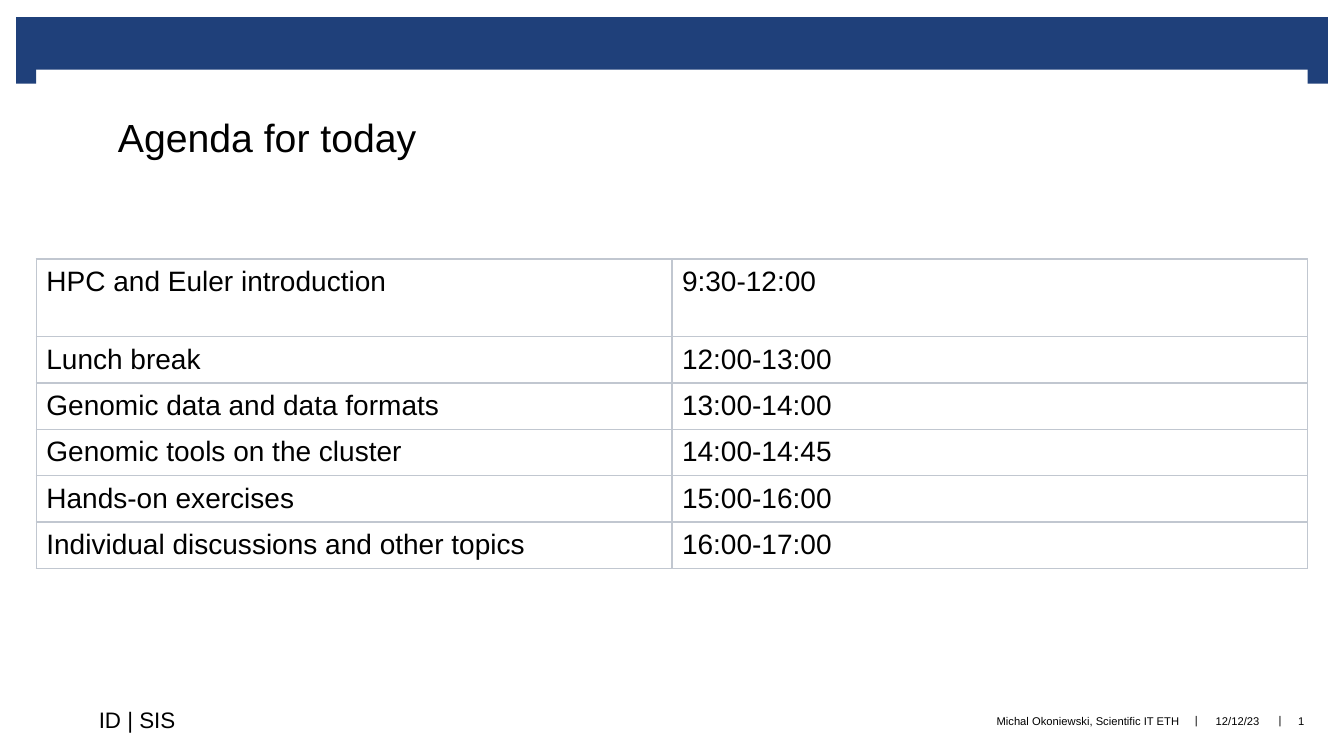
import pptx
import pptx.dml.color
import pptx.enum.shapes
import pptx.enum.text
import pptx.oxml
import pptx.oxml.ns
import pptx.util
from pptx.util import Inches

COLORS = {"band": "1F407A", "text": "000000", "border": "C1C7D0", "cell": "FFFFFF"}
ALIGN = pptx.enum.text.PP_ALIGN
ANCHOR = pptx.enum.text.MSO_ANCHOR

AGENDA = [
    ("HPC and Euler introduction", "9:30-12:00"),
    ("Lunch break", "12:00-13:00"),
    ("Genomic data and data formats", "13:00-14:00"),
    ("Genomic tools on the cluster", "14:00-14:45"),
    ("Hands-on exercises", "15:00-16:00"),
    ("Individual discussions and other topics", "16:00-17:00"),
]


def rgb(name):
    return pptx.dml.color.RGBColor.from_string(COLORS[name])


class AgendaSlide:
    font_name = "Arial"

    def __init__(self, presentation):
        title_only = presentation.slide_layouts[5]
        self.slide = presentation.slides.add_slide(title_only)

    def set_text(self, text_frame, text, size, align=ALIGN.LEFT):
        text_frame.text = text
        paragraph = text_frame.paragraphs[0]
        paragraph.alignment = align
        paragraph.font.name = self.font_name
        paragraph.font.size = pptx.util.Pt(size)
        paragraph.font.color.rgb = rgb("text")

    def band(self, left, top, width, height):
        shape = self.slide.shapes.add_shape(
            pptx.enum.shapes.MSO_SHAPE.RECTANGLE,
            Inches(left), Inches(top), Inches(width), Inches(height))
        shape.shadow.inherit = False
        shape.fill.solid()
        shape.fill.fore_color.rgb = rgb("band")
        shape.line.fill.background()

    def title(self, text, left, top, width, height):
        title = self.slide.shapes.title
        title.left, title.top = Inches(left), Inches(top)
        title.width, title.height = Inches(width), Inches(height)
        frame = title.text_frame
        frame.word_wrap = False
        frame.auto_size = pptx.enum.text.MSO_AUTO_SIZE.NONE
        frame.vertical_anchor = ANCHOR.MIDDLE
        self.set_text(frame, text, 28)

    def label(self, text, left, top, width, height, size=8, align=ALIGN.CENTER):
        box = self.slide.shapes.add_textbox(
            Inches(left), Inches(top), Inches(width), Inches(height))
        frame = box.text_frame
        frame.margin_left = frame.margin_right = 0
        frame.margin_top = frame.margin_bottom = 0
        frame.vertical_anchor = ANCHOR.MIDDLE
        frame.word_wrap = True
        self.set_text(frame, text, size, align)

    def table(self, rows, left, top, width, row_heights):
        column_count = len(rows[0])
        table = self.slide.shapes.add_table(
            len(rows), column_count, Inches(left), Inches(top),
            Inches(width), Inches(sum(row_heights))).table
        table.first_row = table.horz_banding = False
        for column in table.columns:
            column.width = Inches(width / column_count)
        for row, height, texts in zip(table.rows, row_heights, rows):
            row.height = Inches(height)
            for cell, text in zip(row.cells, texts):
                cell.margin_left = cell.margin_right = Inches(0.1)
                cell.margin_top = cell.margin_bottom = Inches(0.07)
                self.set_text(cell.text_frame, text, 20)
                self.cell_borders(cell)
                cell.fill.solid()
                cell.fill.fore_color.rgb = rgb("cell")

    def cell_borders(self, cell):
        properties = cell._tc.get_or_add_tcPr()
        for side in ("lnL", "lnR", "lnT", "lnB"):
            properties.append(pptx.oxml.parse_xml(
                f'<a:{side} {pptx.oxml.ns.nsdecls("a")} w="{pptx.util.Pt(1)}">'
                f'<a:solidFill><a:srgbClr val="{COLORS["border"]}"/></a:solidFill>'
                f'</a:{side}>'))


def main():
    presentation = pptx.Presentation()
    presentation.slide_width = Inches(13.33)
    presentation.slide_height = Inches(7.5)
    agenda = AgendaSlide(presentation)

    agenda.band(0.16, 0.17, 13.01, 0.52)
    for left in (0.16, 12.97):
        agenda.band(left, 0.65, 0.2, 0.18)

    agenda.title("Agenda for today", 1.07, 1.07, 3.2, 0.57)
    agenda.table(AGENDA, 0.36, 2.57, 12.61, [0.77] + [0.46] * 5)

    agenda.label("ID | SIS", 0.98, 6.82, 1.2, 0.64, size=16, align=ALIGN.LEFT)
    agenda.label("Michal Okoniewski, Scientific IT ETH", 6.66, 6.9, 5.04, 0.5,
                 align=ALIGN.RIGHT)
    agenda.label("12/12/23", 11.94, 6.9, 0.67, 0.5)
    agenda.label("1", 12.71, 6.9, 0.39, 0.5)
    for left in (11.79, 12.62):
        agenda.label("|", left, 6.89, 0.15, 0.5)

    presentation.save("out.pptx")


if __name__ == "__main__":
    main()
